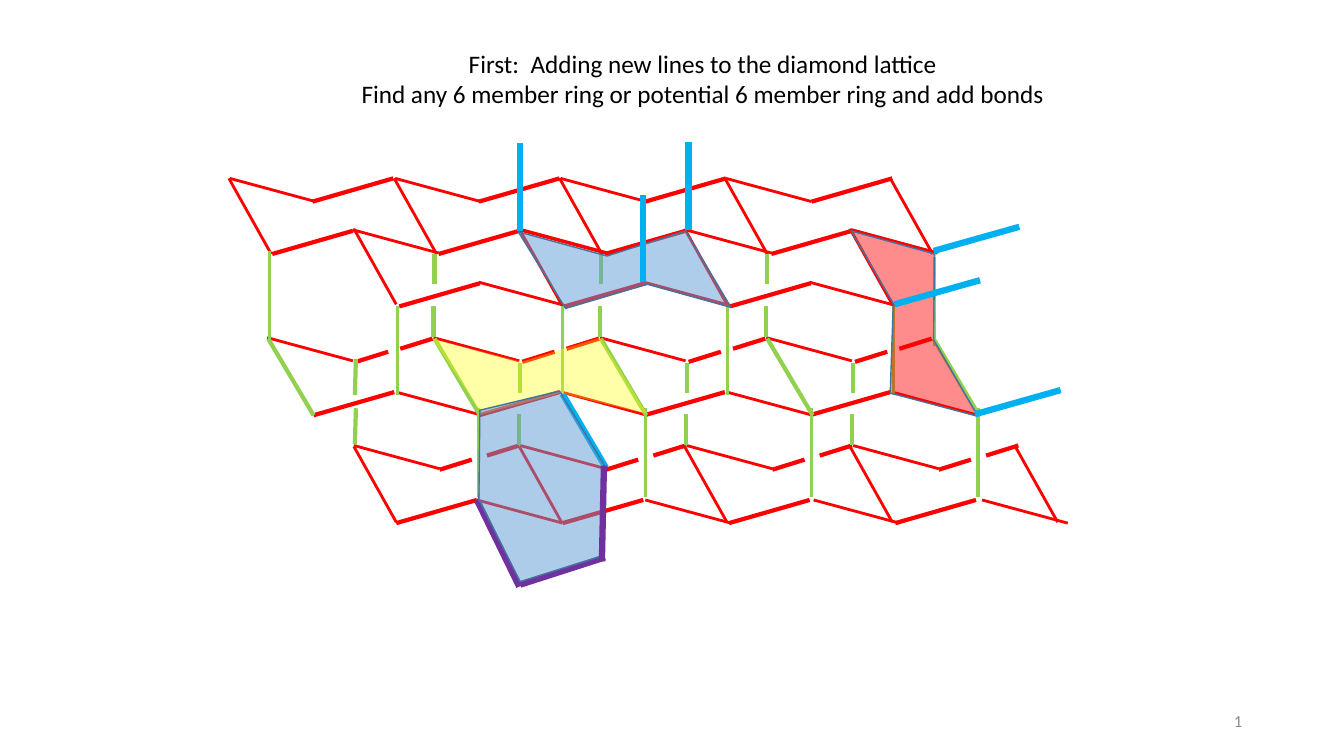
from dataclasses import dataclass

from lxml import etree
from pptx import Presentation
from pptx.dml.color import RGBColor
from pptx.enum.shapes import MSO_CONNECTOR
from pptx.enum.text import MSO_ANCHOR, MSO_AUTO_SIZE, PP_ALIGN
from pptx.oxml import parse_xml
from pptx.oxml.ns import nsdecls, qn
from pptx.util import Inches, Pt

STRAIGHT = MSO_CONNECTOR.STRAIGHT
TOP, MIDDLE = MSO_ANCHOR.TOP, MSO_ANCHOR.MIDDLE
CENTER, RIGHT = PP_ALIGN.CENTER, PP_ALIGN.RIGHT
NO_AUTOFIT = MSO_AUTO_SIZE.NONE


@dataclass(frozen=True)
class Theme:
    """Colours, type sizes and line widths of the slide."""
    font: str = "Calibri"
    heading_size: float = 18
    number_size: float = 12
    black: str = "000000"
    grey: str = "8C8C8C"
    red: str = "FF0000"
    green: str = "92D050"
    blue: str = "00B0F0"
    purple: str = "7030A0"
    yellow: str = "FFFF00"
    ring_fill: str = "5B9BD5"
    ring_line: str = "43739E"
    thin: float = 2
    medium: float = 2.25
    thick: float = 3
    heavy: float = 4.5
    outline: float = 1


@dataclass(frozen=True)
class Box:
    """A region in inches."""
    left: float
    top: float
    width: float
    height: float

    def at(self, x, y):
        """Return slide lengths of a point given within the box."""
        return Inches(self.left + x), Inches(self.top + y)

    def frame(self):
        """Return left, top, width and height as slide lengths."""
        return [Inches(v) for v in (self.left, self.top, self.width, self.height)]


THEME = Theme()
HEADING = ["First:  Adding new lines to the diamond lattice",
           "Find any 6 member ring or potential 6 member ring and add bonds"]

# Each family: colour, width, bond vector, rows of (x, y, count, pitch).
BOND_FAMILIES = [
    (THEME.red, THEME.thin, (0.42, 0.75),
     [(1.31, 3.03, 5, 1.64), (0.07, 0.37, 5, 1.64), (1.31, 0.87, 4, 1.64)]),
    (THEME.red, THEME.thin, (0.85, 0.23),
     [(1.31, 3.02, 4, 1.65), (1.3, 0.88, 4, 1.65), (2.98, 0.88, 2, 3.26),
      (0.08, 0.37, 4, 1.64), (2.55, 1.4, 3, 1.64), (2.53, 3.56, 4, 1.67),
      (0.45, 1.95, 4, 1.65), (1.73, 2.49, 4, 1.64)]),
    (THEME.red, THEME.thick, (0.8, -0.23),
     [(1.73, 3.79, 4, 1.65), (0.91, 2.72, 4, 1.64), (0.5, 1.12, 4, 1.65),
      (1.76, 1.64, 3, 1.64), (0.9, 0.6, 4, 1.65)]),
    (THEME.green, THEME.medium, (0, 0.88),
     [(1.74, 1.64, 4, 1.64), (0.47, 1.09, 1, 0), (2.55, 2.65, 4, 1.65),
      (7.07, 1.15, 1, 0)]),
    (THEME.green, THEME.thick, (0.45, 0.76), [(0.46, 1.96, 5, 1.65)]),
    (THEME.red, THEME.thick, (0.32, -0.1),
     [(2.16, 3.26, 4, 1.65), (2.63, 3.12, 4, 1.65), (1.33, 2.19, 4, 1.65),
      (1.77, 2.06, 4, 1.65)]),
    (THEME.green, THEME.thick, (0, 0.3),
     [(2.96, 2.2, 3, 1.65), (2.95, 2.71, 3, 1.65), (2.1, 1.64, 3, 1.65),
      (2.11, 1.12, 3, 1.65)]),
    (THEME.green, THEME.thick, (-0.01, 0.36),
     [(1.33, 2.16, 1, 0), (1.33, 2.65, 1, 0)]),
]

UP, OUT = (0, -0.87), (0.85, -0.24)

# Each ring: corners, fill, opacity, outlined, bonds below, bonds above.
RINGS = [
    ([(2.94, 0.9), (3.82, 1.14), (4.6, 0.89), (5.05, 1.65), (4.22, 1.42), (3.41, 1.66)],
     THEME.ring_fill, 49, True, [],
     [(THEME.blue, start, UP) for start in ((2.96, 0.89), (4.63, 0.88), (4.18, 1.4))]),
    ([(6.24, 0.89), (7.07, 1.12), (7.06, 1.97), (7.5, 2.73), (6.63, 2.5), (6.66, 1.61)],
     THEME.red, 45, True, [],
     [(THEME.blue, start, OUT) for start in ((7.06, 1.09), (7.47, 2.71), (6.67, 1.62))]),
    ([(2.09, 1.96), (2.97, 2.19), (3.75, 1.95), (4.22, 2.71), (3.36, 2.5), (2.58, 2.71)],
     THEME.yellow, 34, False, [], []),
    ([(2.56, 2.67), (3.35, 2.48), (3.79, 3.21), (3.79, 4.11), (2.96, 4.37), (2.55, 3.56)],
     THEME.ring_fill, 50, True,
     [(THEME.blue, (3.38, 2.51), (0.43, 0.73)),
      (THEME.purple, (2.53, 3.56), (0.42, 0.86)),
      (THEME.purple, (2.96, 4.4), (0.84, -0.27))],
     [(THEME.purple, (3.79, 3.22), (-0.02, 0.95))]),
]


def set_format(target, values):
    """Set attributes of an object from a dict."""
    for name, value in values.items():
        setattr(target, name, value)


def add_bond(page, box, start, vector, color, width):
    """Draw one bond from a start point along a vector."""
    end = (start[0] + vector[0], start[1] + vector[1])
    bond = page.shapes.add_connector(STRAIGHT, *box.at(*start), *box.at(*end))
    bond.line.color.rgb = RGBColor.from_string(color)
    bond.line.width = Pt(width)
    etree.SubElement(bond._element.spPr, qn("a:effectLst"))


def add_lattice(page, box):
    """Draw every row of each family of lattice bonds."""
    for color, width, vector, rows in BOND_FAMILIES:
        for x, y, count, pitch in rows:
            for column in range(count):
                add_bond(page, box, (x + column * pitch, y), vector, color, width)


def add_ring(page, box, corners, fill, opacity, outlined):
    """Draw a translucent six-member ring."""
    points = [box.at(*corner) for corner in corners]
    builder = page.shapes.build_freeform(*points[0])
    builder.add_line_segments(points[1:], close=True)
    ring = builder.convert_to_shape()
    ring.shadow.inherit = False
    ring.fill.solid()
    ring.fill.fore_color.rgb = RGBColor.from_string(fill)
    color = ring._element.spPr.find(qn("a:solidFill")).find(qn("a:srgbClr"))
    etree.SubElement(color, qn("a:alpha"), val=str(opacity * 1000))
    if outlined:
        ring.line.color.rgb = RGBColor.from_string(THEME.ring_line)
        ring.line.width = Pt(THEME.outline)
    else:
        ring.line.fill.background()


def add_rings(page, box):
    """Draw the rings with the new bonds below and above them."""
    for corners, fill, opacity, outlined, below, above in RINGS:
        for color, start, vector in below:
            add_bond(page, box, start, vector, color, THEME.heavy)
        add_ring(page, box, corners, fill, opacity, outlined)
        for color, start, vector in above:
            add_bond(page, box, start, vector, color, THEME.heavy)


def add_heading(page, box):
    """Place and format the two-line title."""
    title = page.shapes.title
    set_format(title, dict(zip(("left", "top", "width", "height"), box.frame())))
    frame = title.text_frame
    frame.text = "\n".join(HEADING)
    set_format(frame, {"auto_size": NO_AUTOFIT, "word_wrap": False, "vertical_anchor": TOP})
    for para in frame.paragraphs:
        para.alignment = CENTER
        for span in para.runs:
            set_format(span.font, {"name": THEME.font, "size": Pt(THEME.heading_size)})
            span.font.color.rgb = RGBColor.from_string(THEME.black)


def add_page_number(page, box):
    """Place the slide number as a live field."""
    frame = page.shapes.add_textbox(*box.frame()).text_frame
    set_format(frame, {"word_wrap": True, "vertical_anchor": MIDDLE})
    para = frame.paragraphs[0]
    para.alignment = RIGHT
    para._p.append(parse_xml(
        f'<a:fld {nsdecls("a")} id="{{B6F15528-21DE-4FAA-801E-634DDDAF4B2B}}" type="slidenum">'
        f'<a:rPr lang="en-US" sz="{THEME.number_size * 100}"><a:solidFill>'
        f'<a:srgbClr val="{THEME.grey}"/></a:solidFill>'
        f'<a:latin typeface="{THEME.font}"/></a:rPr><a:t>1</a:t></a:fld>'))


def main():
    """Build the diamond lattice slide."""
    deck = Presentation()
    set_format(deck, {"slide_width": Inches(13.33), "slide_height": Inches(7.5)})
    page = deck.slides.add_slide(deck.slide_layouts[5])
    lattice_box = Box(2.2, 1.4, 8.4, 4.45)
    add_lattice(page, lattice_box)
    add_heading(page, Box(3.44, 0.43, 7.06, 0.71))
    add_rings(page, lattice_box)
    add_page_number(page, Box(9.42, 6.95, 3, 0.4))
    deck.save("out.pptx")


if __name__ == "__main__":
    main()
